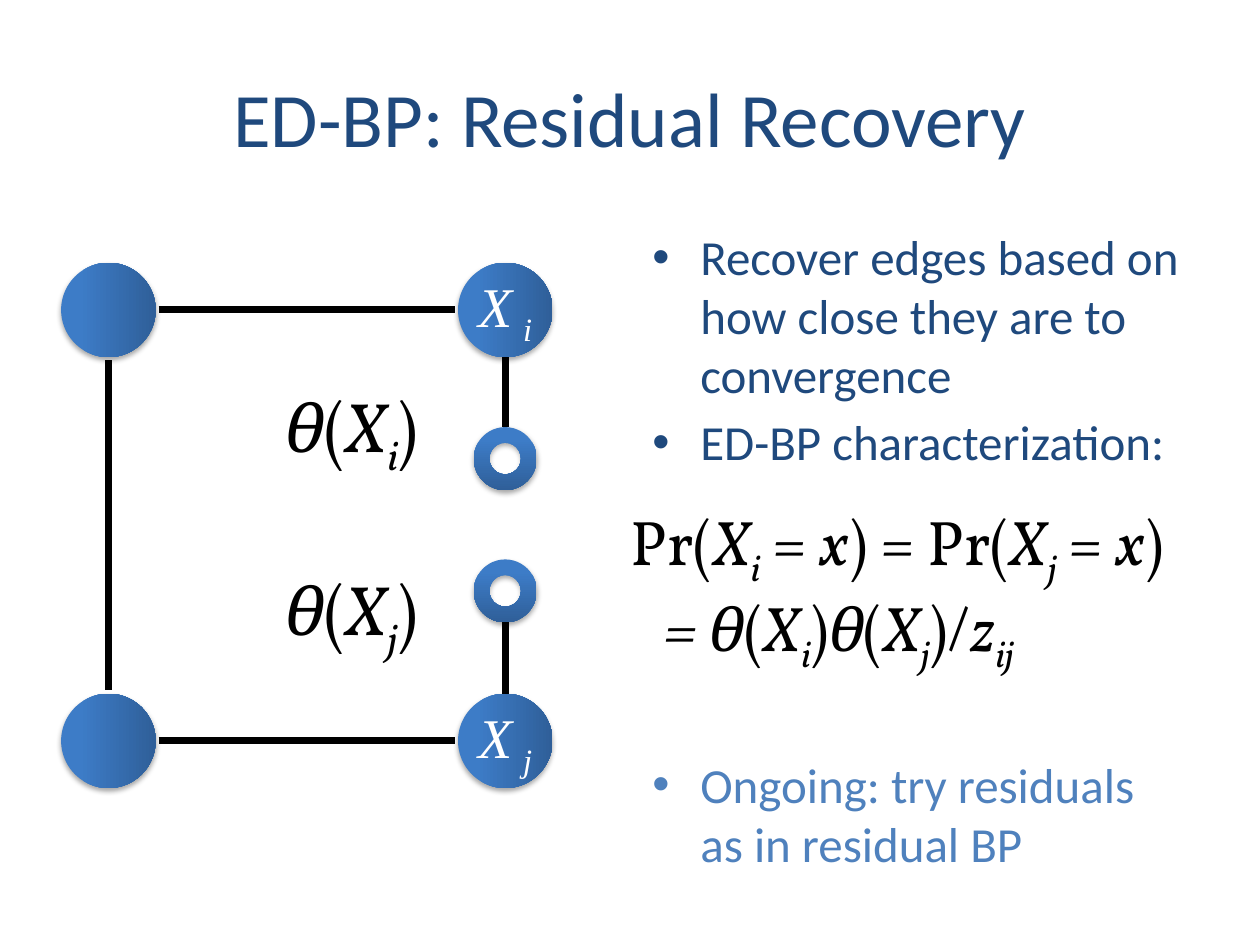
from lxml.etree import SubElement
from pptx import Presentation
from pptx.dml.color import RGBColor
from pptx.enum.shapes import MSO_CONNECTOR, MSO_SHAPE
from pptx.enum.text import MSO_ANCHOR, PP_ALIGN
from pptx.oxml.ns import qn
from pptx.util import Inches, Pt

TITLE = "ED-BP: Residual Recovery"
BULLETS = [
    ("Recover edges based on how close they are to convergence", "1F497D", 5),
    ("ED-BP characterization:", "1F497D", 5),
    ("Ongoing: try residuals as in residual BP", "4F81BD", 162),
]

PLAIN, ITALIC, SUB = "plain", "italic", "sub"


def variable(index):
    return [("X", ITALIC), (index, SUB)]


def potential(index):
    return [("θ", ITALIC), ("(", PLAIN), *variable(index), (")", PLAIN)]


def marginal(index):
    return [("Pr(", PLAIN), *variable(index), (" = ", PLAIN), ("x", ITALIC), (")", PLAIN)]


FORMULAS = [
    (2.17, 2.99, 1.39, 0.77, 40, [potential("i")]),
    (2.17, 4.44, 1.37, 0.77, 40, [potential("j")]),
    (4.91, 3.94, 4.84, 1.31, 36, [
        marginal("i") + [(" = ", PLAIN)] + marginal("j"),
        [("= ", ITALIC)] + potential("i") + potential("j")
        + [("/", PLAIN), ("z", ITALIC), ("ij", SUB)],
    ]),
]
SECOND_LINE_INDENT = 0.26

LEFT, RIGHT, TOP, BOTTOM = 0.86, 4.01, 2.46, 5.88
NODE, RING, EDGE_GAP = 0.75, 0.5, 0.4
UPPER_RING, LOWER_RING = 3.64, 4.69
NODES = [
    (LEFT, TOP, None),
    (LEFT, BOTTOM, None),
    (RIGHT, TOP, "i"),
    (RIGHT, BOTTOM, "j"),
]
EDGES = [
    (LEFT, TOP + EDGE_GAP, LEFT, BOTTOM - EDGE_GAP),
    (LEFT + EDGE_GAP, TOP, RIGHT - EDGE_GAP, TOP),
    (LEFT + EDGE_GAP, BOTTOM, RIGHT - EDGE_GAP, BOTTOM),
    (RIGHT, UPPER_RING - RING / 2, RIGHT, TOP + NODE / 2),
    (RIGHT, LOWER_RING + RING / 2, RIGHT, BOTTOM - NODE / 2),
]


def color(value):
    return RGBColor.from_string(value)


def style(span, size, font, value):
    span.font.size = Pt(size)
    span.font.name = font
    span.font.color.rgb = color(value)


def write_math(para, parts, size, font, value):
    for text, kind in parts:
        span = para.add_run()
        span.text = text
        style(span, size, font, value)
        span.font.italic = kind != PLAIN
        if kind == SUB:
            span.font._element.set("baseline", "-25000")


def add_text_box(page, left, top, width, height, wrap):
    box = page.shapes.add_textbox(Inches(left), Inches(top), Inches(width), Inches(height))
    box.text_frame.word_wrap = wrap
    return box.text_frame


def add_disc(page, kind, x, y, size, angle):
    disc = page.shapes.add_shape(
        kind, Inches(x - size / 2), Inches(y - size / 2), Inches(size), Inches(size))
    disc.line.fill.background()
    disc.fill.gradient()
    disc.fill.gradient_angle = angle
    for stop, value, position in zip(disc.fill.gradient_stops, ("3D7CC7", "2F5F99"), (0.2, 1)):
        stop.color.rgb = color(value)
        stop.position = position
    effects = SubElement(disc._element.spPr, qn("a:effectLst"))
    shadow = SubElement(effects, qn("a:outerShdw"), blurRad=str(Pt(3.1)), dist=str(Pt(1.8)),
                        dir="5400000", rotWithShape="0")
    black = SubElement(shadow, qn("a:srgbClr"), val="000000")
    SubElement(black, qn("a:alpha"), val="35000")
    return disc


def add_edge(page, x1, y1, x2, y2):
    edge = page.shapes.add_connector(
        MSO_CONNECTOR.STRAIGHT, Inches(x1), Inches(y1), Inches(x2), Inches(y2))
    edge.line.width = Pt(4)
    edge.line.color.rgb = color("000000")
    SubElement(edge._element.spPr, qn("a:effectLst"))


def add_title(page):
    title = page.shapes.title
    title.left, title.top, title.width, title.height = map(Inches, (0.5, 0.3, 9, 1.25))
    title.text_frame.text = TITLE
    title.text_frame.vertical_anchor = MSO_ANCHOR.MIDDLE
    para = title.text_frame.paragraphs[0]
    para.alignment = PP_ALIGN.CENTER
    style(para.runs[0], 44, "Calibri", "1F497D")


def add_bullets(page):
    frame = add_text_box(page, 5.08, 1.75, 4.42, 5.25, True)
    frame.text = "\n".join(text for text, _, _ in BULLETS)
    for para, (_, value, space) in zip(frame.paragraphs, BULLETS):
        para.space_before = Pt(space)
        style(para.runs[0], 28, "Calibri", value)
        properties = para._p.get_or_add_pPr()
        properties.set("marL", str(Inches(0.38)))
        properties.set("indent", str(-Inches(0.38)))
        SubElement(properties, qn("a:buFont"), typeface="Arial")
        SubElement(properties, qn("a:buChar"), char="•")


def add_graph(page):
    for x, y, index in NODES:
        node = add_disc(page, MSO_SHAPE.OVAL, x, y, NODE, 0)
        if index:
            frame = node.text_frame
            frame.word_wrap = False
            frame.vertical_anchor = MSO_ANCHOR.MIDDLE
            para = frame.paragraphs[0]
            para.alignment = PP_ALIGN.CENTER
            write_math(para, variable(index), 32, "Times New Roman", "FFFFFF")
            para.runs[0].font._element.set("spc", "600")
    for y in (UPPER_RING, LOWER_RING):
        ring = add_disc(page, MSO_SHAPE.DONUT, RIGHT, y, RING, 270)
        ring.adjustments[0] = 0.25
    for edge in EDGES:
        add_edge(page, *edge)


def add_formulas(page):
    for left, top, width, height, size, lines in FORMULAS:
        frame = add_text_box(page, left, top, width, height, False)
        for number, parts in enumerate(lines):
            para = frame.add_paragraph() if number else frame.paragraphs[0]
            if number:
                para._p.get_or_add_pPr().set("marL", str(Inches(SECOND_LINE_INDENT)))
            write_math(para, parts, size, "Vollkorn", "000000")


def main():
    deck = Presentation()
    deck.slide_width, deck.slide_height = Inches(10), Inches(7.5)
    page = deck.slides.add_slide(deck.slide_layouts[5])
    add_title(page)
    add_bullets(page)
    add_graph(page)
    add_formulas(page)
    deck.save("out.pptx")


if __name__ == "__main__":
    main()
